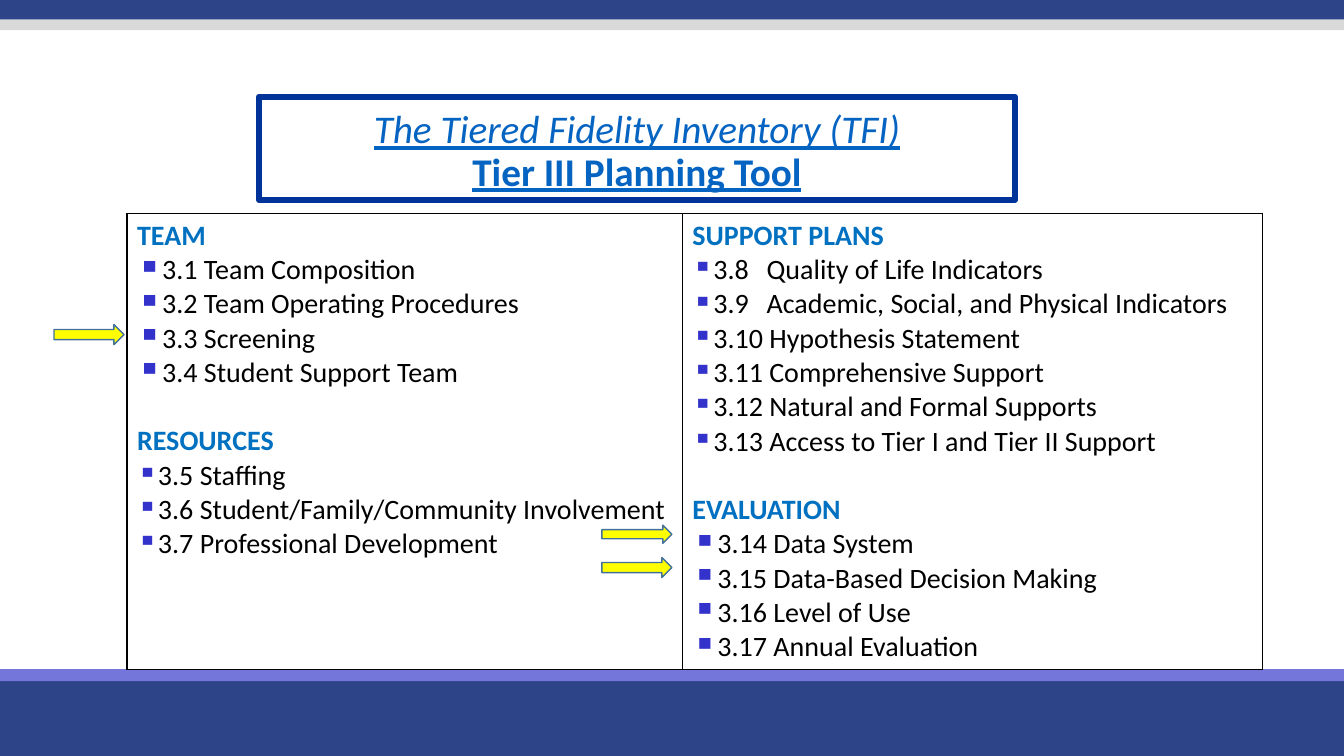
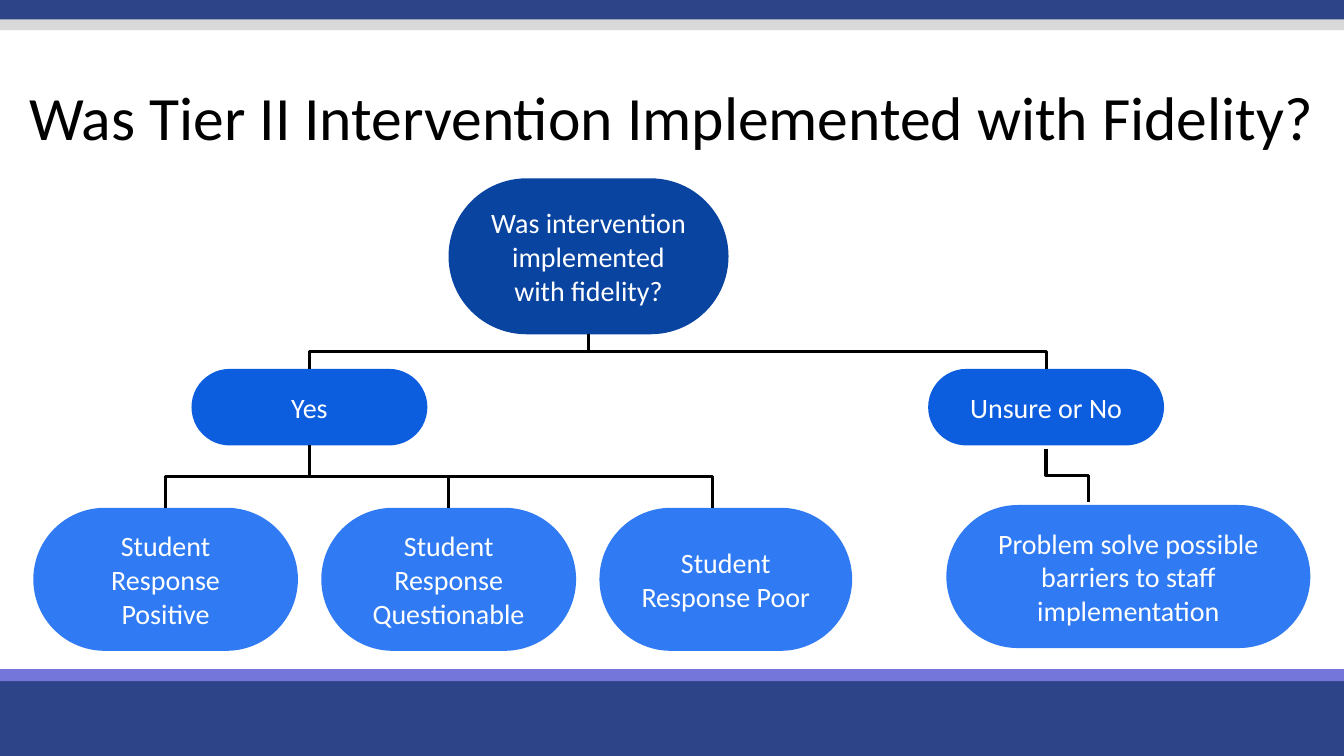
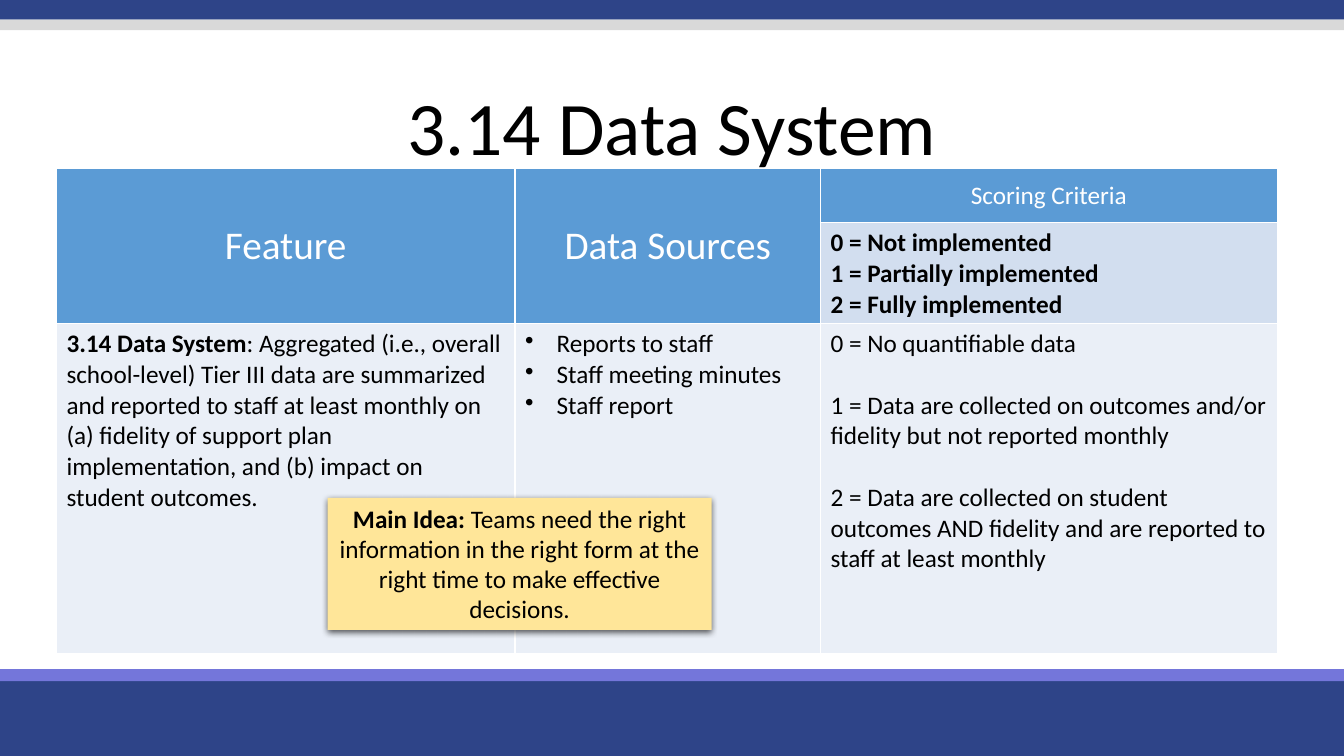
import pptx
import pptx.util
import pptx.dml.color
import pptx.enum.shapes
import pptx.enum.text
import pptx.oxml
import pptx.oxml.ns
from dataclasses import dataclass
from lxml import etree

Pt = pptx.util.Pt
SHAPE = pptx.enum.shapes.MSO_SHAPE
ALIGN = pptx.enum.text.PP_ALIGN
ANCHOR = pptx.enum.text.MSO_ANCHOR
qn = pptx.oxml.ns.qn


@dataclass(frozen=True)
class Theme:
    font: str = "Calibri"
    white: str = "FFFFFF"
    black: str = "000000"
    navy: str = "2E4488"
    grey: str = "D9D9D9"
    violet: str = "7476DA"
    heading: str = "0070C0"
    bullet: str = "3333CC"
    title_link: str = "0563C1"
    title_frame: str = "003399"
    arrow: str = "FFFF00"
    arrow_edge: str = "42719B"
    question: str = "0944A1"
    answer: str = "0D5DDF"
    outcome: str = "307BF3"
    table_head: str = "5B9BD5"
    table_scale: str = "D2DEEF"
    table_body: str = "EAEFF7"
    callout: str = "FFE699"
    small: int = 18
    body: int = 20
    large: int = 28
    title: int = 44
    big_title: int = 54


THEME = Theme()


class Deck:
    def __init__(self, theme):
        self.theme = theme
        self.presentation = pptx.Presentation()
        self.presentation.slide_width = Pt(960)
        self.presentation.slide_height = Pt(540)
        self.slide = None

    def color(self, value):
        return pptx.dml.color.RGBColor.from_string(value)

    def new_slide(self):
        self.slide = self.presentation.slides.add_slide(self.presentation.slide_layouts[6])
        for top, height, fill in (
            (0, 14, self.theme.navy),
            (14, 7.6, self.theme.grey),
            (482, 58, self.theme.navy),
            (478, 8.6, self.theme.violet),
        ):
            self.shape(SHAPE.RECTANGLE, (0, top, 960, height), fill)

    def shape(self, kind, box, fill, line=None, width=1, margin=None, anchor=ANCHOR.TOP):
        shape = self.slide.shapes.add_shape(kind, *map(Pt, box))
        shape.shadow.inherit = False
        shape.fill.solid()
        shape.fill.fore_color.rgb = self.color(fill)
        if line:
            shape.line.color.rgb = self.color(line)
            shape.line.width = Pt(width)
        else:
            shape.line.fill.background()
        frame = shape.text_frame
        frame.word_wrap = True
        frame.vertical_anchor = anchor
        if margin:
            frame.margin_left = frame.margin_right = Pt(margin)
            frame.margin_top = frame.margin_bottom = Pt(margin)
        return shape

    def bullet(self, paragraph, char, indent, color, percent, tab):
        properties = paragraph._p.get_or_add_pPr()
        properties.set("marL", str(Pt(indent)))
        properties.set("indent", str(-Pt(indent)))
        tint = etree.SubElement(properties, qn("a:buClr"))
        etree.SubElement(tint, qn("a:srgbClr"), val=color)
        etree.SubElement(properties, qn("a:buSzPct"), val=str(percent * 1000))
        etree.SubElement(properties, qn("a:buChar"), char=char)
        if tab:
            stops = etree.SubElement(properties, qn("a:tabLst"))
            etree.SubElement(stops, qn("a:tab"), pos=str(Pt(tab)), algn="l")

    def add_text(self, frame, *runs, size=None, color=None, align=ALIGN.LEFT,
                 before=0, spacing=None, bullet=None):
        paragraph = frame.paragraphs[0]
        if paragraph.runs:
            paragraph = frame.add_paragraph()
            paragraph.space_before = Pt(before)
        paragraph.alignment = align
        if spacing:
            paragraph.line_spacing = spacing
        if bullet:
            self.bullet(paragraph, **bullet)
        for text, *marks in runs:
            if text == "\n":
                paragraph.add_line_break()
                continue
            run = paragraph.add_run()
            run.text = text
            font = run.font
            font.name = self.theme.font
            font.size = Pt(size or self.theme.body)
            font.color.rgb = self.color(color or self.theme.black)
            font.bold = "bold" in marks
            font.italic = "italic" in marks
            font.underline = "underline" in marks

    def title(self, text, height, size, anchor):
        frame = self.slide.shapes.add_textbox(Pt(0), Pt(49.7), Pt(960), Pt(height)).text_frame
        frame.word_wrap = True
        frame.vertical_anchor = anchor
        self.add_text(frame, (text,), size=size, align=ALIGN.CENTER, spacing=0.9)

    def arrow(self, left, top, height):
        self.shape(SHAPE.RIGHT_ARROW, (left, top, 50, height), self.theme.arrow, self.theme.arrow_edge)

    def pill(self, text, box, fill):
        pill = self.shape(SHAPE.ROUNDED_RECTANGLE, box, fill, margin=9.4, anchor=ANCHOR.MIDDLE)
        pill.adjustments[0] = 0.5
        self.add_text(pill.text_frame, (text,), color=self.theme.white, align=ALIGN.CENTER)

    def branch(self, start, end):
        middle_x, middle_y = (start[0] + end[0]) / 2, (start[1] + end[1]) / 2
        half_drop, half_reach = (end[1] - start[1]) / 2, (start[0] - end[0]) / 2
        branch = self.slide.shapes.add_connector(
            pptx.enum.shapes.MSO_CONNECTOR.ELBOW,
            Pt(middle_x - half_drop), Pt(middle_y - half_reach),
            Pt(middle_x + half_drop), Pt(middle_y + half_reach))
        branch.line.color.rgb = self.color(self.theme.black)
        branch.line.width = Pt(2.25)
        properties = branch.element.spPr
        properties.find(qn("a:xfrm")).set("rot", str(90 * 60000))
        etree.SubElement(properties, qn("a:effectLst"))

    def table(self, left, top, widths, heights, fills, border):
        table = self.slide.shapes.add_table(
            len(heights), len(widths), Pt(left), Pt(top), Pt(sum(widths)), Pt(sum(heights))).table
        table.first_row = table.horz_banding = False
        for column, width in zip(table.columns, widths):
            column.width = Pt(width)
        for row, height, row_fills in zip(table.rows, heights, fills):
            row.height = Pt(height)
            for cell, fill in zip(row.cells, row_fills):
                for side in ("L", "R", "T", "B"):
                    edge = etree.SubElement(cell._tc.get_or_add_tcPr(), qn("a:ln" + side), w=str(Pt(1)))
                    paint = etree.SubElement(edge, qn("a:solidFill"))
                    etree.SubElement(paint, qn("a:srgbClr"), val=border)
                cell.fill.solid()
                cell.fill.fore_color.rgb = self.color(fill)
        return table

    def drop_shadow(self, shape):
        effects = shape.element.spPr.find(qn("a:effectLst"))
        shadow = etree.SubElement(effects, qn("a:outerShdw"), blurRad=str(Pt(4.5)),
                                  dist=str(Pt(1.5)), dir=str(90 * 60000), algn="t", rotWithShape="0")
        tint = etree.SubElement(shadow, qn("a:srgbClr"), val=self.theme.black)
        etree.SubElement(tint, qn("a:alpha"), val="63000")


def planning_tool(deck):
    deck.new_slide()
    columns = (
        (
            ("TEAM", 120, ("3.1 Team Composition", "3.2 Team Operating Procedures",
                           "3.3 Screening", "3.4 Student Support Team")),
            ("RESOURCES", 100, ("3.5 Staffing", "3.6 Student/Family/Community Involvement",
                                "3.7 Professional Development")),
        ),
        (
            ("SUPPORT PLANS", 100, ("3.8\tQuality of Life Indicators",
                                    "3.9\tAcademic, Social, and Physical Indicators",
                                    "3.10 Hypothesis Statement", "3.11 Comprehensive Support",
                                    "3.12 Natural and Formal Supports",
                                    "3.13 Access to Tier I and Tier II Support")),
            ("EVALUATION", 120, ("3.14 Data System", "3.15 Data-Based Decision Making",
                                 "3.16 Level of Use", "3.17 Annual Evaluation")),
        ),
    )
    inventory = deck.table(90.7, 152.6, (396.7, 414.7), (323.3,), [(THEME.white,) * 2], THEME.black)
    for cell, sections in zip(inventory.rows[0].cells, columns):
        for heading, percent, items in sections:
            deck.add_text(cell.text_frame, (heading, "bold"), color=THEME.heading, before=24.4)
            for item in items:
                deck.add_text(cell.text_frame, (item,), bullet=dict(
                    char="▪", indent=13.7, color=THEME.bullet, percent=percent,
                    tab=53 if "\t" in item else None))
    for left, top, height in ((38.6, 231.8, 14.4), (430, 398.2, 14.4), (430, 375.1, 13)):
        deck.arrow(left, top, height)
    heading_box = deck.shape(SHAPE.RECTANGLE, (185, 69.1, 540, 73.6), THEME.white,
                             THEME.title_frame, 4.5, anchor=ANCHOR.BOTTOM)
    deck.add_text(heading_box.text_frame,
                  ("The Tiered Fidelity Inventory (TFI)", "italic", "underline"), ("\n",),
                  ("Tier III Planning Tool", "bold", "underline"),
                  size=THEME.large, color=THEME.title_link, align=ALIGN.CENTER, spacing=0.9)


def fidelity_tree(deck):
    deck.new_slide()
    for text, box, fill in (
        ("Was intervention implemented with fidelity?", (320.4, 127.4, 200, 111.4), THEME.question),
        ("Unsure or No", (663, 263.5, 168.5, 54.7), THEME.answer),
        ("Yes", (136.8, 263.5, 168.5, 54.7), THEME.answer),
        ("Student Response Positive", (23.8, 362.7, 189, 102.2), THEME.outcome),
        ("Student Response Questionable", (229.5, 362.7, 182, 102.2), THEME.outcome),
        ("Student Response Poor", (428.2, 362.7, 180.5, 102.2), THEME.outcome),
        ("Problem solve possible barriers to staff implementation",
         (676, 360.7, 260, 102.2), THEME.outcome),
    ):
        deck.pill(text, box, fill)
    deck.title("Was Tier II Intervention Implemented with Fidelity?", 63.4, THEME.title, ANCHOR.BOTTOM)
    for start, ends in (
        ((420.4, 238.5), ((221, 263.5), (747.2, 263.5))),
        ((221, 318.2), ((118.2, 362.7), (320.4, 362.7), (509, 362.7))),
        ((747.2, 320.4), ((777.6, 358.6),)),
    ):
        for end in ends:
            deck.branch(start, end)


def data_system(deck):
    deck.new_slide()
    deck.title("3.14 Data System", 87.1, THEME.big_title, ANCHOR.MIDDLE)
    scoring = deck.table(
        40.3, 120.2, (327.6, 218.2, 326.2), (38.9, 70.6, 235.4),
        ((THEME.table_head,) * 3,
         (THEME.table_head, THEME.table_head, THEME.table_scale),
         (THEME.table_body,) * 3), THEME.white)
    for column, (text, size) in enumerate((
            ("Feature", THEME.large), ("Data Sources", THEME.large), ("Scoring Criteria", THEME.small))):
        head = scoring.cell(0, column)
        if size == THEME.large:
            head.merge(scoring.cell(1, column))
        head.vertical_anchor = ANCHOR.MIDDLE
        deck.add_text(head.text_frame, (text,), size=size, color=THEME.white, align=ALIGN.CENTER)
    scale = scoring.cell(1, 2)
    scale.vertical_anchor = ANCHOR.MIDDLE
    for level in ("0 = Not implemented", "1 = Partially implemented", "2 = Fully implemented"):
        deck.add_text(scale.text_frame, (level, "bold"), size=THEME.small)
    feature, sources, criteria = (cell.text_frame for cell in scoring.rows[2].cells)
    deck.add_text(feature, ("3.14 Data System", "bold"),
                  (": Aggregated (i.e., overall school-level) Tier III data are summarized and reported "
                   "to staff at least monthly on (a) fidelity of support plan implementation, and "
                   "(b) impact on student outcomes.",), size=THEME.small)
    for source in ("Reports to staff", "Staff meeting minutes", "Staff report"):
        deck.add_text(sources, (source,), size=THEME.small, bullet=dict(
            char="•", indent=22.5, color=THEME.black, percent=100, tab=None))
    for criterion in (
        "0 = No quantifiable data",
        "1 = Data are collected on outcomes and/or fidelity but not reported monthly",
        "2 = Data are collected on student outcomes AND fidelity and are reported to staff "
        "at least monthly",
    ):
        deck.add_text(criteria, (criterion,), size=THEME.small, before=22)
    main_idea = deck.shape(SHAPE.RECTANGLE, (234, 355.7, 274.3, 94.3), THEME.callout)
    deck.drop_shadow(main_idea)
    deck.add_text(main_idea.text_frame, ("Main Idea: ", "bold"),
                  ("Teams need the right information in the right form at the right time to make "
                   "effective decisions.",), size=THEME.small, align=ALIGN.CENTER)


def main():
    deck = Deck(THEME)
    planning_tool(deck)
    fidelity_tree(deck)
    data_system(deck)
    deck.presentation.save("out.pptx")


if __name__ == "__main__":
    main()
